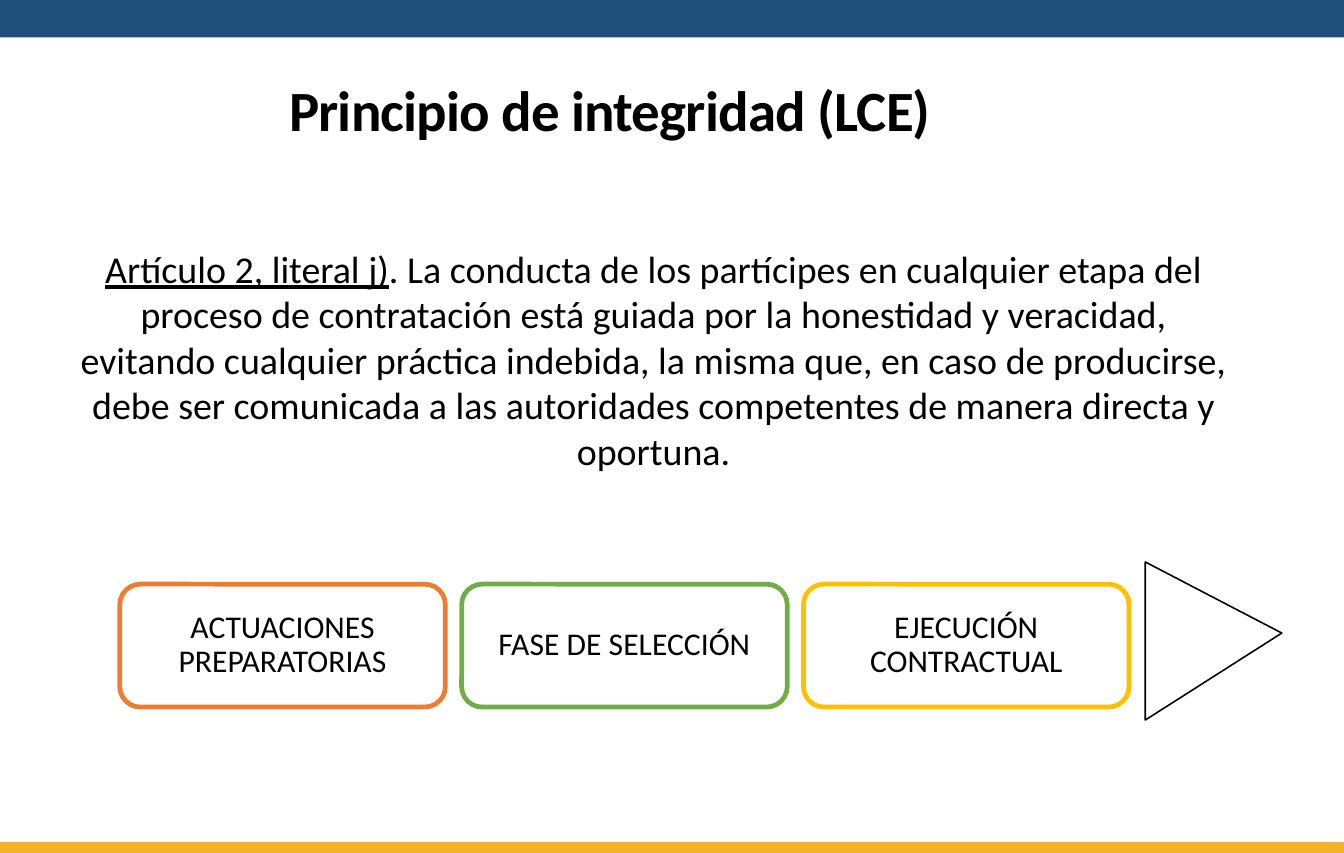
from pptx import Presentation
from pptx.dml.color import RGBColor
from pptx.enum.shapes import MSO_SHAPE
from pptx.enum.text import MSO_ANCHOR, PP_ALIGN
from pptx.util import Pt

RECT = MSO_SHAPE.RECTANGLE
ROUNDED = MSO_SHAPE.ROUNDED_RECTANGLE
TRIANGLE = MSO_SHAPE.ISOSCELES_TRIANGLE
TOP, MIDDLE = MSO_ANCHOR.TOP, MSO_ANCHOR.MIDDLE
CENTER = PP_ALIGN.CENTER

WIDTH, HEIGHT = 850.39, 540
FONT = "Calibri"
COLORS = {
    "text": "000000",
    "white": "FFFFFF",
    "navy": "1F4E79",
    "gold": "F3B329",
    "orange": "ED7D31",
    "green": "70AD47",
    "yellow": "FFC000",
}
PHASES = [
    ("ACTUACIONES PREPARATORIAS", "orange"),
    ("FASE DE SELECCIÓN", "green"),
    ("EJECUCIÓN CONTRACTUAL", "yellow"),
]
ARTICLE = [
    ("Artículo 2, literal j)", {"underline": True}),
    (
        ". La conducta de los partícipes en cualquier etapa del proceso de "
        "contratación está guiada por la honestidad y veracidad, evitando "
        "cualquier práctica indebida, la misma que, en caso de producirse, "
        "debe ser comunicada a las autoridades competentes de manera directa "
        "y oportuna.",
        {},
    ),
]


def rgb(name):
    return RGBColor.from_string(COLORS[name])


def set_attributes(target, values):
    for name, value in values.items():
        setattr(target, name, value)


def place(sp, left, top, width, height):
    box = {"left": left, "top": top, "width": width, "height": height}
    set_attributes(sp, {name: Pt(value) for name, value in box.items()})


def write(sp, runs, size, anchor, margin_x=7.2, margin_y=3.6, spacing=1.0):
    tf = sp.text_frame
    set_attributes(tf, {
        "word_wrap": True,
        "vertical_anchor": anchor,
        "margin_left": Pt(margin_x),
        "margin_right": Pt(margin_x),
        "margin_top": Pt(margin_y),
        "margin_bottom": Pt(margin_y),
    })
    p = tf.paragraphs[0]
    set_attributes(p, {
        "alignment": CENTER,
        "line_spacing": spacing,
        "space_before": Pt(0),
    })
    for text, style in runs:
        r = p.add_run()
        r.text = text
        set_attributes(r.font, {"name": FONT, "size": Pt(size), **style})
        r.font.color.rgb = rgb("text")


def add_figure(s, kind, box, fill=None, line=None, weight=1):
    sp = s.shapes.add_shape(kind, *map(Pt, box))
    sp.shadow.inherit = False
    if fill:
        sp.fill.solid()
        sp.fill.fore_color.rgb = rgb(fill)
    else:
        sp.fill.background()
    if line:
        sp.line.color.rgb = rgb(line)
        sp.line.width = Pt(weight)
    else:
        sp.line.fill.background()
    return sp


def add_title(s, text):
    sp = s.shapes.title
    place(sp, 93.6, 43.6, 584.6, 51.1)
    write(sp, [(text, {"bold": True})], 36, TOP)
    r = sp.text_frame.paragraphs[0].runs[0]
    r.font._element.set("spc", "-50")


def add_article(s):
    sp = s.shapes.add_textbox(Pt(37.7), Pt(151.9), Pt(751.7), Pt(152.6))
    write(sp, ARTICLE, 24, TOP)


def add_phases(s):
    left, top, width, height, pitch = 75.8, 369.8, 206, 77.8, 216.3
    for i, (name, color) in enumerate(PHASES):
        box = (left + i * pitch, top, width, height)
        sp = add_figure(s, ROUNDED, box, "white", color, 3)
        write(sp, [(name, {})], 20, MIDDLE, 11, 7.9, 0.9)


def add_arrow(s):
    sp = add_figure(s, TRIANGLE, (717.8, 362.6, 100.1, 86.4), line="text")
    sp.adjustments[0] = 0.45
    sp.rotation = 90


def main():
    prs = Presentation()
    prs.slide_width, prs.slide_height = Pt(WIDTH), Pt(HEIGHT)
    s = prs.slides.add_slide(prs.slide_layouts[5])
    add_figure(s, RECT, (0, 0, WIDTH, 23.6), "navy")
    add_figure(s, RECT, (0, 533.5, WIDTH, 6.5), "gold", "gold", 0.75)
    add_title(s, "Principio de integridad (LCE)")
    add_article(s)
    add_phases(s)
    add_arrow(s)
    prs.save("out.pptx")


if __name__ == "__main__":
    main()
